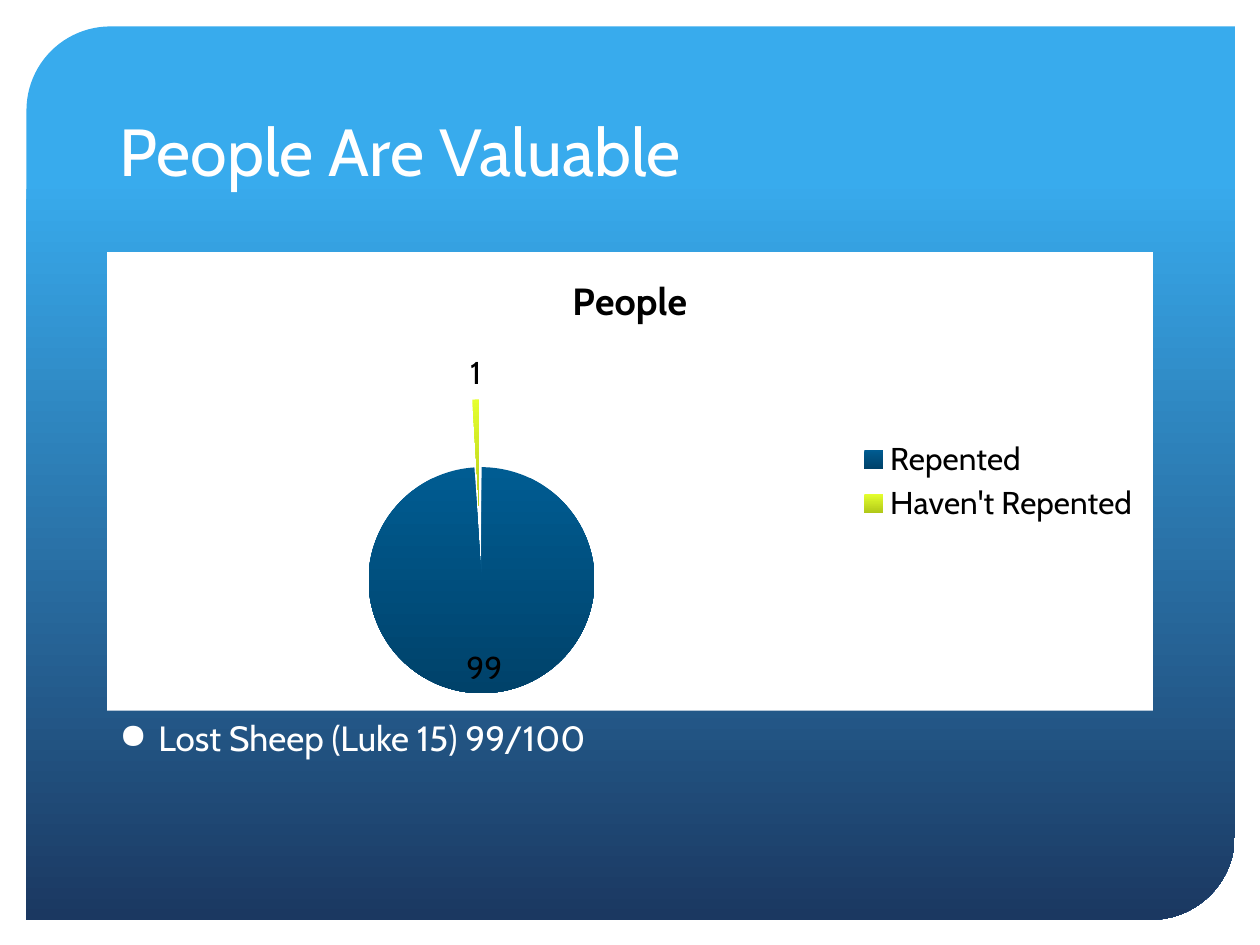
from lxml import etree
from pptx import Presentation
from pptx.chart import data as chart_data
from pptx.dml.color import RGBColor
from pptx.enum import chart as chart_enum, shapes, text
from pptx.oxml import ns, parse_xml
from pptx.util import Inches, Pt

FONT = "Cabin"
WHITE = RGBColor(0xFF, 0xFF, 0xFF)
BLACK = RGBColor(0, 0, 0)
SKY = RGBColor(0x38, 0xAB, 0xED)
NAVY = RGBColor(0x1B, 0x38, 0x61)
SLICE_COLORS = (
    (RGBColor(0x00, 0x5C, 0x92), RGBColor(0x00, 0x42, 0x6A)),
    (RGBColor(0xE5, 0xFF, 0x2E), RGBColor(0xB0, 0xC8, 0x18)),
)


def set_attributes(target, values):
    for name, value in values.items():
        setattr(target, name, value)


def set_font(font, size, color, bold=False):
    set_attributes(font, {"name": FONT, "size": Pt(size), "bold": bold})
    font.color.rgb = color


def fill_gradient(fill, top, bottom, start=0.0):
    """Fill from top to bottom, with the first color held until start."""
    fill.gradient()
    fill.gradient_angle = 270
    for stop, color, position in zip(fill.gradient_stops, (top, bottom), (start, 1.0)):
        stop.color.rgb = color
        stop.position = position


def place(shape, box):
    names = ("left", "top", "width", "height")
    set_attributes(shape, dict(zip(names, map(Inches, box))))


def add_panel(slide, box):
    panel = slide.shapes.add_shape(
        shapes.MSO_SHAPE.ROUND_2_DIAG_RECTANGLE, *map(Inches, box))
    panel.adjustments[0] = 0.094
    panel.adjustments[1] = 0
    panel.shadow.inherit = False
    panel.line.fill.background()
    fill_gradient(panel.fill, SKY, NAVY, 0.17)
    # Send the panel behind the title
    slide.shapes.title.element.addprevious(panel.element)


def add_title(slide, box, wording):
    title = slide.shapes.title
    place(title, box)
    frame = title.text_frame
    frame.text = wording
    set_attributes(frame, {"vertical_anchor": text.MSO_ANCHOR.BOTTOM,
                           "word_wrap": True, "auto_size": text.MSO_AUTO_SIZE.NONE})
    paragraph = frame.paragraphs[0]
    paragraph.alignment = text.PP_ALIGN.LEFT
    set_font(paragraph.font, 38, WHITE)


def add_people_chart(slide, box):
    people = chart_data.CategoryChartData()
    people.categories = ["Repented", "Haven't Repented"]
    people.add_series("People", (99, 1))
    chart = slide.shapes.add_chart(
        chart_enum.XL_CHART_TYPE.PIE, *map(Inches, box), people).chart
    set_font(chart.font, 18, BLACK)

    # Chart title and legend
    chart.has_title = True
    chart.chart_title.text_frame.text = "People"
    set_font(chart.chart_title.text_frame.paragraphs[0].font, 21.6, BLACK, bold=True)
    chart.has_legend = True
    set_attributes(chart.legend, {"position": chart_enum.XL_LEGEND_POSITION.RIGHT,
                                  "include_in_layout": False})

    # Slices, pulled apart, with their values
    plot = chart.plots[0]
    plot.vary_by_categories = True
    series = plot.series[0]
    for index, colors in enumerate(SLICE_COLORS):
        fill_gradient(series.points[index].format.fill, *colors)
    explosion = etree.Element(ns.qn("c:explosion"), val="30")
    series._element.find(ns.qn("c:dPt")).addprevious(explosion)
    plot.has_data_labels = True
    set_attributes(plot.data_labels, {
        "show_value": True, "show_percentage": False,
        "position": chart_enum.XL_LABEL_POSITION.BEST_FIT})
    set_font(plot.data_labels.font, 18, BLACK)

    # White chart background
    background = parse_xml(
        f'<c:spPr {ns.nsdecls("c", "a")}><a:solidFill><a:srgbClr val="{WHITE}"/>'
        "</a:solidFill><a:ln><a:noFill/></a:ln></c:spPr>")
    chart._chartSpace.find(ns.qn("c:chart")).addnext(background)


def add_bullet_text(slide, box, wording):
    frame = slide.shapes.add_textbox(*map(Inches, box)).text_frame
    frame.word_wrap = True
    paragraph = frame.paragraphs[0]
    paragraph.text = wording
    properties = paragraph._p.get_or_add_pPr()
    properties.set("marL", str(Inches(0.31)))
    properties.set("indent", str(-Inches(0.31)))
    etree.SubElement(properties, ns.qn("a:buChar"), char="●")
    set_font(paragraph.font, 20, WHITE)


def main():
    presentation = Presentation()
    set_attributes(presentation, {"slide_width": Inches(10), "slide_height": Inches(7.5)})
    slide = presentation.slides.add_slide(presentation.slide_layouts[5])
    add_panel(slide, (0.21, 0.21, 9.59, 7.09))
    add_title(slide, (0.85, 0.42, 8.29, 1.14), "People Are Valuable")
    add_people_chart(slide, (0.85, 2, 8.3, 3.64))
    add_bullet_text(slide, (0.85, 5.64, 8.3, 0.98), "Lost Sheep (Luke 15) 99/100")
    presentation.save("out.pptx")


if __name__ == "__main__":
    main()
